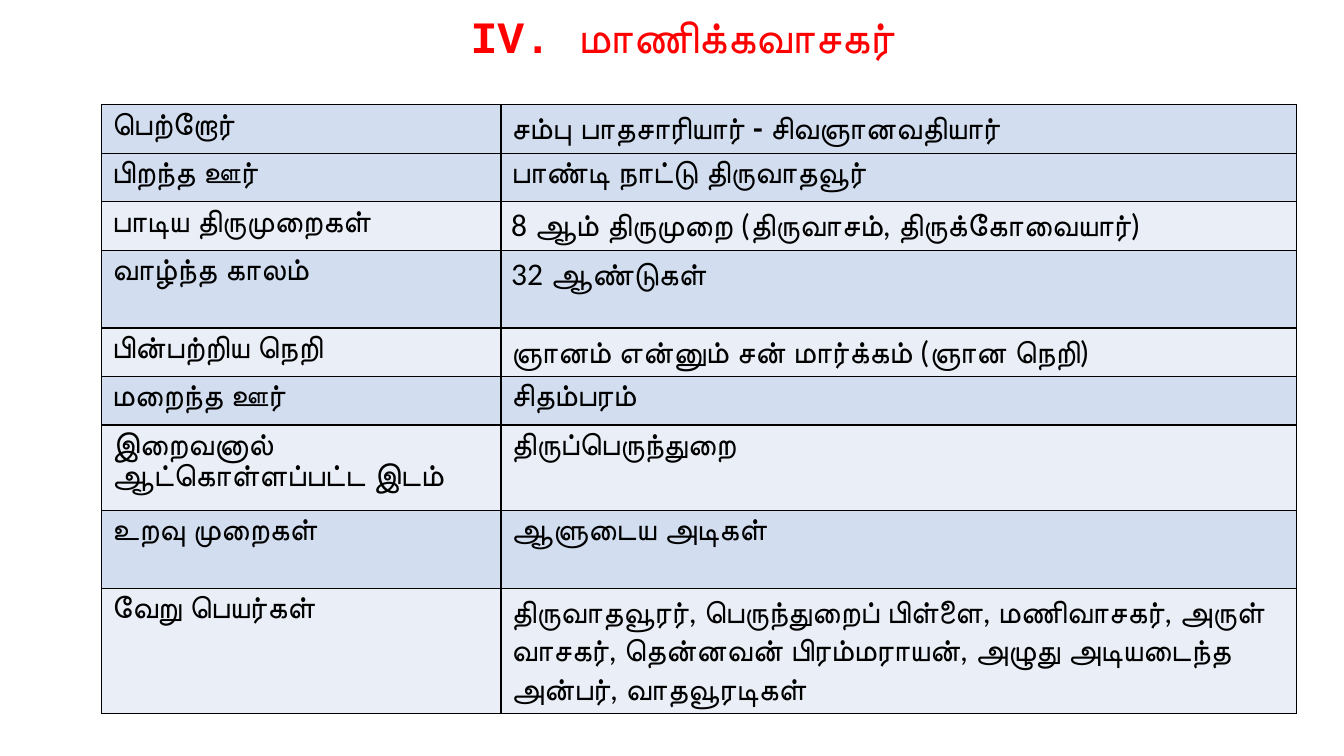
from dataclasses import dataclass

from lxml import etree
from pptx import Presentation
from pptx.dml.color import RGBColor
from pptx.enum.text import MSO_ANCHOR, PP_ALIGN
from pptx.oxml.ns import qn
from pptx.util import Inches, Pt

CENTER = PP_ALIGN.CENTER
LEFT = PP_ALIGN.LEFT
TOP = MSO_ANCHOR.TOP
TITLE_ONLY = 5


@dataclass(frozen=True)
class Theme:
    title_font: str = "Courier New"
    body_font: str = "Calibri"
    title_size: float = 32
    body_size: float = 22.5
    title_color: str = "FF0000"
    text_color: str = "000000"
    border_color: str = "000000"
    border_width: float = 1
    dark_band: str = "D2DEEF"
    light_band: str = "EAEFF7"


THEME = Theme()

TITLE = "IV. மாணிக்கவாசகர்"
COLUMN_WIDTHS = (3.96, 7.89)
BOLD_VALUE_ROW = 0

# Label, value, row height in inches
FACTS = (
    ("பெற்றோர்", "சம்பு பாதசாரியார் - சிவஞானவதியார்", 0.48),
    ("பிறந்த ஊர்", "பாண்டி நாட்டு திருவாதவூர்", 0.48),
    ("பாடிய திருமுறைகள்", "8 ஆம் திருமுறை (திருவாசம், திருக்கோவையார்)", 0.48),
    ("வாழ்ந்த காலம்", "32 ஆண்டுகள்", 0.77),
    ("பின்பற்றிய நெறி", "ஞானம் என்னும் சன் மார்க்கம் (ஞான நெறி)", 0.48),
    ("மறைந்த ஊர்", "சிதம்பரம்", 0.48),
    ("இறைவனால் ஆட்கொள்ளப்பட்ட இடம்", "திருப்பெருந்துறை", 0.85),
    ("உறவு முறைகள்", "ஆளுடைய அடிகள்", 0.77),
    (
        "வேறு பெயர்கள்",
        "திருவாதவூரர், பெருந்துறைப் பிள்ளை, மணிவாசகர், அருள் வாசகர், "
        "தென்னவன் பிரம்மராயன், அழுது அடியடைந்த அன்பர், வாதவூரடிகள்",
        1.23,
    ),
)


def write_text(text_frame, text, *, font, size, color, bold=False,
               align=LEFT, line_spacing=1.0, space_after=0):
    text_frame.word_wrap = True
    paragraph = text_frame.paragraphs[0]
    paragraph.alignment = align
    paragraph.line_spacing = line_spacing
    paragraph.space_before = Pt(0)
    paragraph.space_after = Pt(space_after)
    run = paragraph.add_run()
    run.text = text
    run.font.name = font
    run.font.size = Pt(size)
    run.font.bold = bold
    run.font.color.rgb = RGBColor.from_string(color)


def add_cell_borders(cell):
    properties = cell._tc.get_or_add_tcPr()
    for side in ("a:lnL", "a:lnR", "a:lnT", "a:lnB"):
        line = etree.SubElement(properties, qn(side), w=str(Pt(THEME.border_width)))
        fill = etree.SubElement(line, qn("a:solidFill"))
        etree.SubElement(fill, qn("a:srgbClr"), val=THEME.border_color)


def build_title(slide, left, top, width, height):
    title = slide.shapes.title
    title.left, title.top = Inches(left), Inches(top)
    title.width, title.height = Inches(width), Inches(height)
    title.text_frame.vertical_anchor = TOP
    write_text(title.text_frame, TITLE, font=THEME.title_font,
               size=THEME.title_size, color=THEME.title_color, bold=True,
               align=CENTER, line_spacing=1.07, space_after=6)


def build_facts_table(slide, left, top):
    height = sum(row_height for _, _, row_height in FACTS)
    table = slide.shapes.add_table(
        len(FACTS), len(COLUMN_WIDTHS), Inches(left), Inches(top),
        Inches(sum(COLUMN_WIDTHS)), Inches(height)).table
    table.horz_banding = False
    for column, width in zip(table.columns, COLUMN_WIDTHS):
        column.width = Inches(width)

    for row_index, (label, value, row_height) in enumerate(FACTS):
        table.rows[row_index].height = Inches(row_height)
        # The header row and every odd row share the dark band
        is_dark = row_index == 0 or row_index % 2 == 1
        band = THEME.dark_band if is_dark else THEME.light_band
        for column_index, text in enumerate((label, value)):
            cell = table.cell(row_index, column_index)
            add_cell_borders(cell)
            cell.fill.solid()
            cell.fill.fore_color.rgb = RGBColor.from_string(band)
            write_text(cell.text_frame, text, font=THEME.body_font,
                       size=THEME.body_size, color=THEME.text_color,
                       bold=row_index == BOLD_VALUE_ROW and column_index == 1)


def main():
    presentation = Presentation()
    presentation.slide_width = Inches(13.33)
    presentation.slide_height = Inches(7.5)
    slide = presentation.slides.add_slide(presentation.slide_layouts[TITLE_ONLY])
    build_title(slide, 0.21, 0, 13.12, 0.67)
    build_facts_table(slide, 1.01, 1.04)
    presentation.save("out.pptx")


if __name__ == "__main__":
    main()
